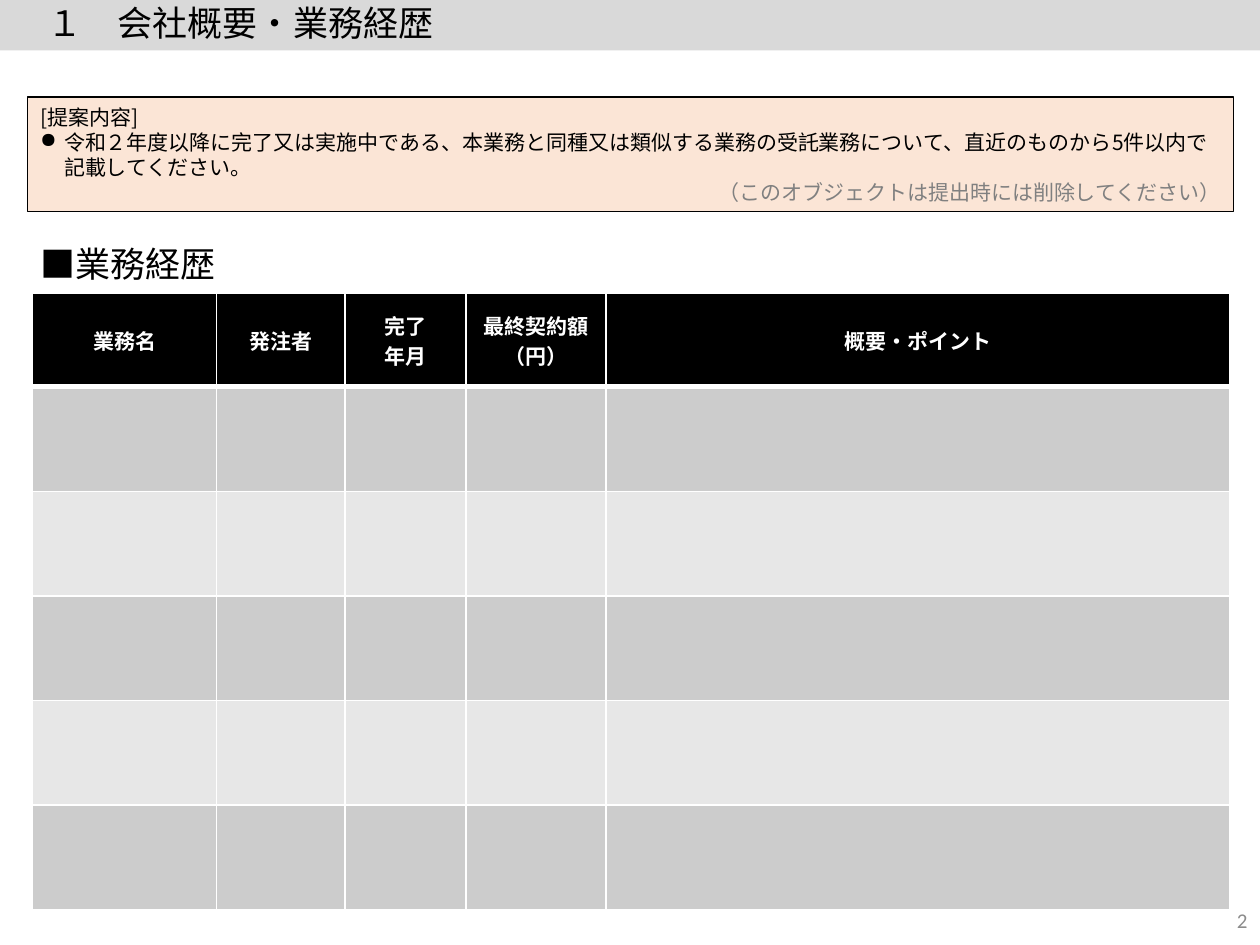
from dataclasses import dataclass

import pptx
import pptx.dml.color
import pptx.enum.shapes
import pptx.enum.text
import pptx.oxml.ns
import pptx.util
from lxml import etree
from pptx.util import Inches

ALIGN = pptx.enum.text.PP_ALIGN
MIDDLE = pptx.enum.text.MSO_ANCHOR.MIDDLE


@dataclass(frozen=True)
class Theme:
    font: str = "Noto Sans CJK JP"
    number_font: str = "Calibri"
    black: str = "000000"
    white: str = "FFFFFF"
    title_band: str = "D9D9D9"
    note_fill: str = "FBE5D6"
    note_gray: str = "808080"
    number_gray: str = "8C8C8C"
    row_bands: tuple = ("CCCCCC", "E7E7E7")
    heading_size: int = 20
    body_size: int = 12


THEME = Theme()
HEADERS = ["業務名", "発注者", "完了\n年月", "最終契約額（円）", "概要・ポイント"]
COLUMN_WIDTHS = [1.46, 1.02, 0.96, 1.11, 4.95]
HEADER_HEIGHT, ROW_HEIGHT, ROW_COUNT = 0.74, 0.83, 5


def rgb(value):
    return pptx.dml.color.RGBColor.from_string(value)


def fill_solid(target, color):
    target.fill.solid()
    target.fill.fore_color.rgb = rgb(color)


def format_paragraph(paragraph, size, color=THEME.black, align=ALIGN.LEFT,
                     bold=False, font=THEME.font):
    paragraph.alignment = align
    for run in paragraph.runs:
        run.font.size = pptx.util.Pt(size)
        run.font.bold = bold
        run.font.name = font
        run.font.color.rgb = rgb(color)
        east_asian = etree.SubElement(run.font._element, pptx.oxml.ns.qn("a:ea"))
        east_asian.set("typeface", font)


def place(shape, left, top, width, height):
    shape.left, shape.top = Inches(left), Inches(top)
    shape.width, shape.height = Inches(width), Inches(height)


def prepare_frame(shape):
    frame = shape.text_frame
    frame.word_wrap = True
    frame.auto_size = pptx.enum.text.MSO_AUTO_SIZE.NONE
    frame.vertical_anchor = MIDDLE
    return frame


def set_heading(shape, text):
    frame = prepare_frame(shape)
    frame.text = text
    paragraph = frame.paragraphs[0]
    paragraph.line_spacing = 0.9
    paragraph.space_before = pptx.util.Pt(7.5)
    format_paragraph(paragraph, THEME.heading_size)


def add_title(slide, text):
    title = slide.shapes.title
    place(title, 0, 0, 10, 0.4)
    fill_solid(title, THEME.title_band)
    set_heading(title, text)


def add_subheading(slide, text):
    box = slide.shapes.add_textbox(Inches(0.22), Inches(1.91), Inches(2.24), Inches(0.4))
    set_heading(box, text)


def add_bullet(paragraph, character, indent):
    properties = paragraph._p.get_or_add_pPr()
    properties.set("marL", str(Inches(indent)))
    properties.set("indent", str(-Inches(indent)))
    bullet = etree.SubElement(properties, pptx.oxml.ns.qn("a:buChar"))
    bullet.set("char", character)


def add_instructions(slide):
    box = slide.shapes.add_shape(pptx.enum.shapes.MSO_SHAPE.RECTANGLE,
                                 Inches(0.22), Inches(0.77), Inches(9.57), Inches(0.91))
    box.shadow.inherit = False
    fill_solid(box, THEME.note_fill)
    box.line.color.rgb = rgb(THEME.black)
    box.line.width = pptx.util.Pt(0.75)
    frame = prepare_frame(box)
    frame.text = "\n".join([
        "[提案内容]",
        "令和２年度以降に完了又は実施中である、本業務と同種又は類似する業務の"
        "受託業務について、直近のものから5件以内で記載してください。",
        "（このオブジェクトは提出時には削除してください）",
    ])
    label, request, reminder = frame.paragraphs
    for paragraph in frame.paragraphs:
        paragraph.line_spacing = pptx.util.Pt(14.3)
    format_paragraph(label, THEME.body_size)
    format_paragraph(request, THEME.body_size)
    format_paragraph(reminder, THEME.body_size, THEME.note_gray, ALIGN.RIGHT)
    add_bullet(request, "●", 0.19)


def set_borders(cell, top, bottom):
    """Draw white cell borders; top and bottom widths are in points."""
    properties = cell._tc.get_or_add_tcPr()
    widths = {"a:lnL": 1, "a:lnR": 1, "a:lnT": top, "a:lnB": bottom}
    for position, (tag, width) in enumerate(widths.items()):
        line = etree.Element(pptx.oxml.ns.qn(tag), w=str(pptx.util.Pt(width)))
        solid = etree.SubElement(line, pptx.oxml.ns.qn("a:solidFill"))
        etree.SubElement(solid, pptx.oxml.ns.qn("a:srgbClr"), val=THEME.white)
        properties.insert(position, line)


def add_history_table(slide):
    height = HEADER_HEIGHT + ROW_COUNT * ROW_HEIGHT
    table = slide.shapes.add_table(ROW_COUNT + 1, len(HEADERS), Inches(0.26), Inches(2.33),
                                   Inches(sum(COLUMN_WIDTHS)), Inches(height)).table
    for column, width in zip(table.columns, COLUMN_WIDTHS):
        column.width = Inches(width)
    for index, row in enumerate(table.rows):
        row.height = Inches(ROW_HEIGHT if index else HEADER_HEIGHT)
        for cell in row.cells:
            fill_solid(cell, THEME.row_bands[(index - 1) % 2] if index else THEME.black)
            set_borders(cell, top=3 if index == 1 else 1, bottom=1 if index else 3)
    for cell, text in zip(table.rows[0].cells, HEADERS):
        cell.vertical_anchor = MIDDLE
        cell.text_frame.text = text
        for paragraph in cell.text_frame.paragraphs:
            format_paragraph(paragraph, THEME.body_size, THEME.white, ALIGN.CENTER, bold=True)


def add_page_number(slide, number):
    box = slide.shapes.add_textbox(Inches(7.75), Inches(7.1), Inches(2.25), Inches(0.4))
    frame = prepare_frame(box)
    frame.text = str(number)
    format_paragraph(frame.paragraphs[0], THEME.body_size, THEME.number_gray,
                     ALIGN.RIGHT, font=THEME.number_font)


def main():
    presentation = pptx.Presentation()
    presentation.slide_width, presentation.slide_height = Inches(10), Inches(7.5)
    slide = presentation.slides.add_slide(presentation.slide_layouts[5])
    add_page_number(slide, 2)
    add_title(slide, "\u3000１\u3000会社概要・業務経歴".replace("\u3000", "　"))
    add_history_table(slide)
    add_subheading(slide, "■業務経歴")
    add_instructions(slide)
    presentation.save("out.pptx")


if __name__ == "__main__":
    main()
